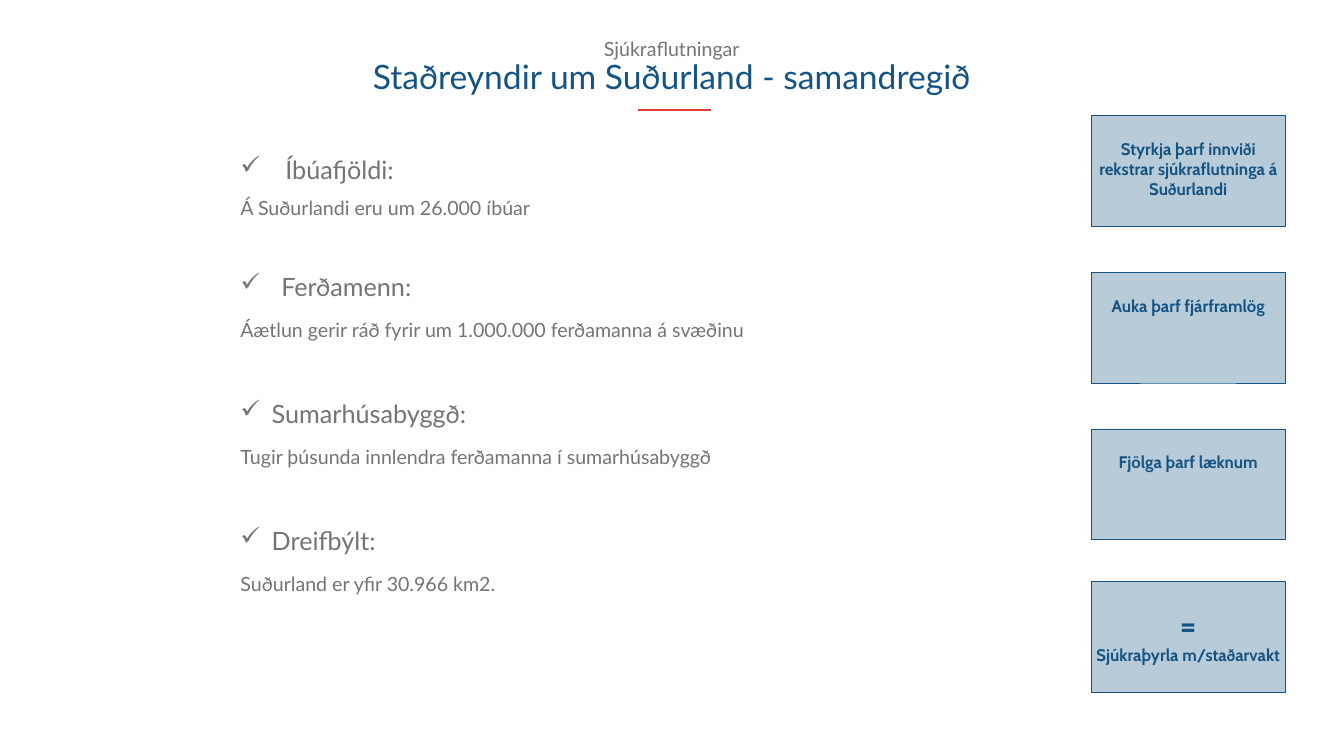
from lxml.etree import SubElement
from pptx import Presentation
from pptx.dml.color import RGBColor
from pptx.enum.shapes import MSO_CONNECTOR as CONN, MSO_SHAPE as SHAPE
from pptx.enum.text import MSO_ANCHOR as ANCHOR, PP_ALIGN as ALIGN
from pptx.oxml.ns import qn
from pptx.util import Inches, Pt

BLUE, GREY, RED = "155482", "737572", "E13E3C"

# heading, text indent, space before, detail, detail line spacing
FACTS = [
    ("Íbúafjöldi:", 0.89, 0, "Á Suðurlandi eru um 26.000 íbúar", 0.9),
    ("Ferðamenn:", 0.81, 70, "Áætlun gerir ráð fyrir um 1.000.000 ferðamanna á svæðinu", 1.1),
    ("Sumarhúsabyggð:", 0.62, 77, "Tugir þúsunda innlendra ferðamanna í sumarhúsabyggð", 1.1),
    ("Dreifbýlt:", 0.62, 77, "Suðurland er yfir 30.966 km2.", 1.1),
]
NEEDS = [
    (2.29, [("Styrkja þarf innviði rekstrar sjúkraflutninga á Suðurlandi", 24)]),
    (5.4, [("Auka þarf fjárframlög", 24)]),
    (8.51, [("Fjölga þarf læknum", 24)]),
    (11.53, [("=", 48), ("Sjúkraþyrla m/staðarvakt", 24)]),
]


def rgb(hex_color):
    return RGBColor.from_string(hex_color)


def add_text(tf, text, size=28, font="Lato", color=GREY, bold=False,
             align=ALIGN.LEFT, spacing=None, before=0, indent=None):
    """Add a paragraph; an indent gives it a hanging check mark."""
    p = tf.paragraphs[0] if not tf.paragraphs[0].runs else tf.add_paragraph()
    p.alignment = align
    p.space_before = Pt(before)
    if spacing:
        p.line_spacing = spacing
    if indent:
        pPr = p._p.get_or_add_pPr()
        pPr.set("marL", str(Inches(indent)))
        pPr.set("indent", str(-Inches(indent)))
        SubElement(pPr, qn("a:buChar"), char="✓")
    r = p.add_run()
    r.text = text
    r.font.name, r.font.size, r.font.bold = font, Pt(size), bold
    r.font.color.rgb = rgb(color)


class SlideBuilder:
    def __init__(self, slide):
        self.s = slide

    def text_box(self, x, y, w, h, inset=(0.1, 0.05), wrap=True):
        tf = self.s.shapes.add_textbox(Inches(x), Inches(y), Inches(w), Inches(h)).text_frame
        tf.word_wrap = wrap
        tf.margin_left = tf.margin_right = Inches(inset[0])
        tf.margin_top = tf.margin_bottom = Inches(inset[1])
        return tf

    def rule(self, x1, x2, y, color=RED, width=3):
        line = self.s.shapes.add_connector(CONN.STRAIGHT, Inches(x1), Inches(y), Inches(x2), Inches(y))
        line.line.color.rgb = rgb(color)
        line.line.width = Pt(width)
        SubElement(line._element.spPr, qn("a:effectLst"))

    def card(self, x, y, w, h, lines):
        sp = self.s.shapes.add_shape(SHAPE.RECTANGLE, Inches(x), Inches(y), Inches(w), Inches(h))
        sp.shadow.inherit = False
        sp.fill.solid()
        sp.fill.fore_color.rgb = rgb(BLUE)
        clr = sp._element.spPr.find(qn("a:solidFill")).find(qn("a:srgbClr"))
        SubElement(clr, qn("a:alpha"), val="30000")
        sp.line.color.rgb = rgb(BLUE)
        sp.line.width = Pt(0.75)
        tf = sp.text_frame
        tf.word_wrap = True
        tf.vertical_anchor = ANCHOR.TOP
        tf.margin_left = tf.margin_right = Inches(0.08)
        tf.margin_top = Inches(0.46)
        for text, size in lines:
            add_text(tf, text, size, "Cabin", BLUE, True, ALIGN.CENTER)


def main():
    prs = Presentation()
    prs.slide_width, prs.slide_height = Inches(26.66), Inches(15)
    b = SlideBuilder(prs.slides.add_slide(prs.slide_layouts[6]))

    facts = b.text_box(4.57, 2.9, 20.05, 9.93, inset=(0.2, 0.1))
    for heading, indent, before, detail, spacing in FACTS:
        add_text(facts, heading, 36, align=ALIGN.JUSTIFY, spacing=1.1, before=before, indent=indent)
        add_text(facts, detail, align=ALIGN.JUSTIFY, spacing=spacing, before=20)

    title = b.text_box(7.06, 0.74, 12.53, 1.25, wrap=False)
    add_text(title, "Sjúkraflutningar", align=ALIGN.CENTER, spacing=0.9)
    add_text(title, "Staðreyndir um Suðurland - samandregið", 48, color=BLUE, align=ALIGN.CENTER, spacing=0.9)
    b.rule(14.1, 12.66, 2.18)

    for top, lines in NEEDS:
        b.card(21.65, top, 3.84, 2.2, lines)

    prs.save("out.pptx")


if __name__ == "__main__":
    main()
